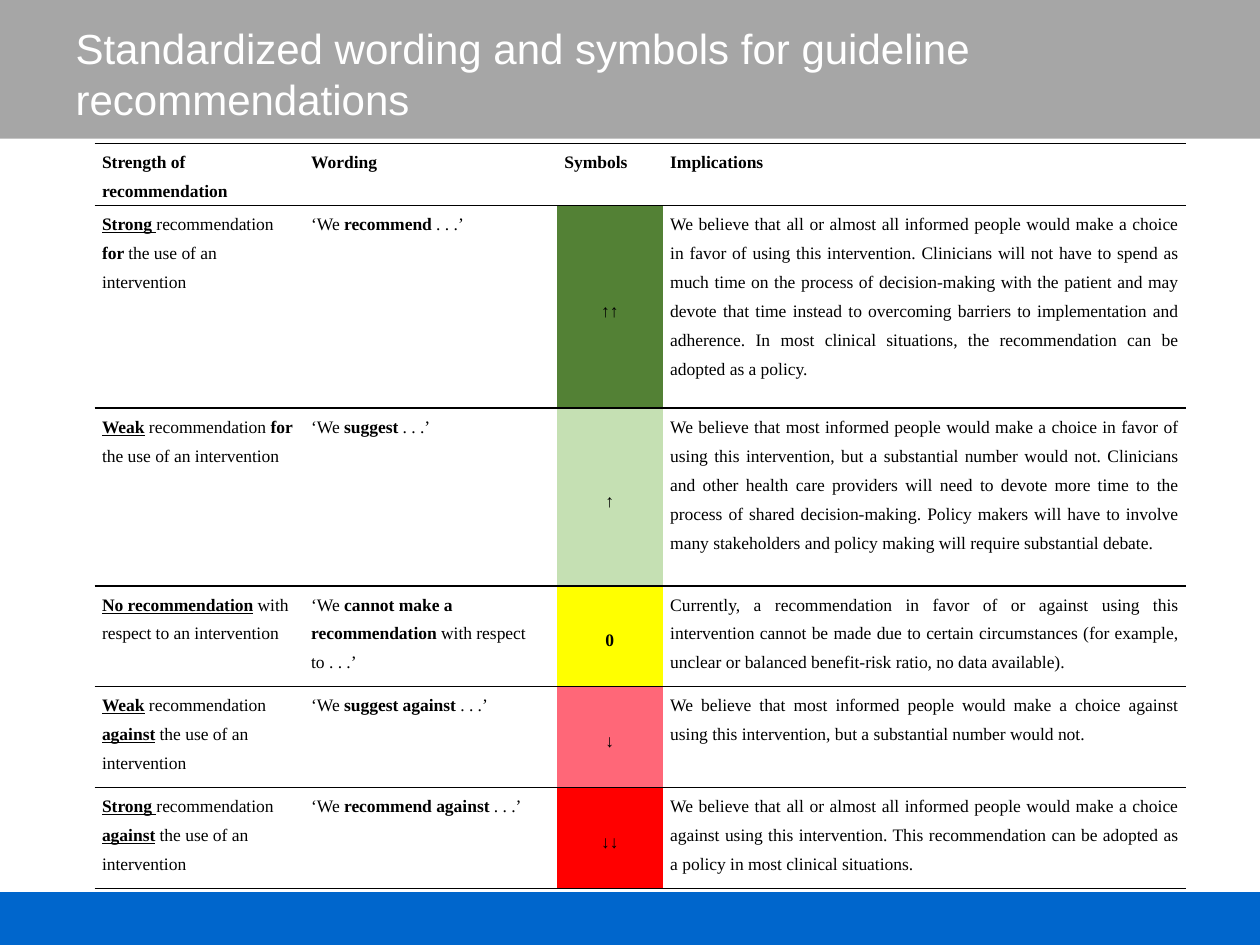
from lxml.etree import SubElement
from pptx import Presentation
from pptx.dml.color import RGBColor
from pptx.enum.shapes import MSO_SHAPE as Shape
from pptx.enum.text import MSO_ANCHOR as Anchor, MSO_AUTO_SIZE as AutoSize, PP_ALIGN as Align
from pptx.oxml.ns import qn
from pptx.util import Inches, Pt

WHITE = RGBColor(0xFF, 0xFF, 0xFF)
BLACK = RGBColor(0x00, 0x00, 0x00)
GRAY = RGBColor(0xA6, 0xA6, 0xA6)
BLUE = RGBColor(0x00, 0x66, 0xCC)
DARK_GREEN = RGBColor(0x53, 0x81, 0x35)
LIGHT_GREEN = RGBColor(0xC5, 0xE0, 0xB3)
YELLOW = RGBColor(0xFF, 0xFF, 0x00)
PINK = RGBColor(0xFF, 0x67, 0x78)
RED = RGBColor(0xFF, 0x00, 0x00)

TITLE = "Standardized wording and symbols for guideline recommendations"
COLUMN_WIDTHS = [1.66, 2.01, 0.84, 4.15]
ROW_HEIGHTS = [0.49, 1.61, 1.41, 0.8, 0.8, 0.8]
SYMBOL_COLUMN, IMPLICATIONS_COLUMN = 2, 3

# *text* is bold, _text_ is bold and underlined
HEADINGS = ["*Strength of recommendation*", "*Wording*", "*Symbols*", "*Implications*"]
RECOMMENDATIONS = [
    (DARK_GREEN, [
        "_Strong _recommendation *for *the use of an intervention",
        "‘We *recommend *. . .’",
        "*↑↑*",
        "We believe that all or almost all informed people would make a choice in favor of "
        "using this intervention. Clinicians will not have to spend as much time on the "
        "process of decision-making with the patient and may devote that time instead to "
        "overcoming barriers to implementation and adherence. In most clinical situations, "
        "the recommendation can be adopted as a policy."]),
    (LIGHT_GREEN, [
        "_Weak_ recommendation *for *the use of an intervention",
        "‘We *suggest* . . .’",
        "*↑*",
        "We believe that most informed people would make a choice in favor of using this "
        "intervention, but a substantial number would not. Clinicians and other health care "
        "providers will need to devote more time to the process of shared decision-making. "
        "Policy makers will have to involve many stakeholders and policy making will require "
        "substantial debate."]),
    (YELLOW, [
        "_No recommendation_ with respect to an intervention",
        "‘We *cannot make a recommendation* with respect to . . .’",
        "*0*",
        "Currently, a recommendation in favor of or against using this intervention cannot be "
        "made due to certain circumstances (for example, unclear or balanced benefit-risk "
        "ratio, no data available)."]),
    (PINK, [
        "_Weak_ recommendation _against_ the use of an intervention",
        "‘We *suggest against* . . .’",
        "*↓*",
        "We believe that most informed people would make a choice against using this "
        "intervention, but a substantial number would not."]),
    (RED, [
        "_Strong _recommendation _against_ the use of an intervention",
        "‘We *recommend against* . . .’",
        "*↓↓*",
        "We believe that all or almost all informed people would make a choice against using "
        "this intervention. This recommendation can be adopted as a policy in most clinical "
        "situations."]),
]


def add_band(slide, left, top, width, height, color):
    band = slide.shapes.add_shape(Shape.RECTANGLE, left, top, width, height)
    band.shadow.inherit = False
    band.fill.solid()
    band.fill.fore_color.rgb = color
    band.line.fill.background()


def place_title(slide, left, top, width, height):
    """Format the title placeholder and bring it in front of the bands."""
    title = slide.shapes.title
    title.left, title.top, title.width, title.height = left, top, width, height
    frame = title.text_frame
    frame.text = TITLE
    frame.word_wrap = True
    frame.auto_size = AutoSize.NONE
    frame.vertical_anchor = Anchor.TOP
    paragraph = frame.paragraphs[0]
    paragraph.alignment = Align.LEFT
    paragraph.font.name = "Arial"
    paragraph.font.size = Pt(24)
    paragraph.font.color.rgb = WHITE
    slide.shapes._spTree.append(title._element)


def add_marked_runs(paragraph, text):
    for i, chunk in enumerate(text.split("*")):
        for j, piece in enumerate(chunk.split("_")):
            if piece:
                run = paragraph.add_run()
                run.text = piece
                run.font.bold = bool(i % 2 or j % 2)
                run.font.underline = bool(j % 2)


def set_horizontal_rules(cell):
    """Draw the top and bottom borders only."""
    properties = cell._tc.get_or_add_tcPr()
    for side in ("lnL", "lnR", "lnT", "lnB"):
        line = SubElement(properties, qn(f"a:{side}"), w=str(Pt(1)))
        if side in ("lnT", "lnB"):
            fill = SubElement(line, qn("a:solidFill"))
            SubElement(fill, qn("a:srgbClr"), val=str(BLACK))
        else:
            SubElement(line, qn("a:noFill"))


def fill_cell(cell, text, alignment, space_after, color=None):
    cell.margin_left = cell.margin_right = Inches(0.06)
    cell.margin_top = cell.margin_bottom = 0
    set_horizontal_rules(cell)
    if color is None:
        cell.fill.background()
    else:
        cell.fill.solid()
        cell.fill.fore_color.rgb = color
        cell.vertical_anchor = Anchor.MIDDLE
    paragraph = cell.text_frame.paragraphs[0]
    paragraph.alignment = alignment
    paragraph.line_spacing = 1.5
    paragraph.space_after = Pt(space_after)
    paragraph.font.name = "Times New Roman"
    paragraph.font.size = Pt(10)
    paragraph.font.color.rgb = BLACK
    add_marked_runs(paragraph, text)


def add_recommendation_table(slide, left, top, width, height):
    table = slide.shapes.add_table(
        len(ROW_HEIGHTS), len(COLUMN_WIDTHS), left, top, width, height).table
    table.first_row = table.horz_banding = False
    for column, column_width in zip(table.columns, COLUMN_WIDTHS):
        column.width = Inches(column_width)
    for row, row_height in zip(table.rows, ROW_HEIGHTS):
        row.height = Inches(row_height)

    for index, heading in enumerate(HEADINGS):
        alignment = Align.JUSTIFY if index == SYMBOL_COLUMN else Align.LEFT
        fill_cell(table.cell(0, index), heading, alignment, 8 if index else 0)

    body_alignments = [Align.LEFT, Align.LEFT, Align.CENTER, Align.JUSTIFY]
    for row_index, (color, texts) in enumerate(RECOMMENDATIONS, start=1):
        for index, (text, alignment) in enumerate(zip(texts, body_alignments)):
            fill_cell(table.cell(row_index, index), text, alignment,
                      0 if index == IMPLICATIONS_COLUMN else 8,
                      color if index == SYMBOL_COLUMN else None)


def main():
    presentation = Presentation()
    presentation.slide_width = Inches(10)
    presentation.slide_height = Inches(7.5)
    slide = presentation.slides.add_slide(presentation.slide_layouts[5])
    add_band(slide, 0, Inches(7.08), Inches(10), Inches(0.42), BLUE)
    add_band(slide, 0, 0, Inches(10), Inches(1.1), GRAY)
    add_recommendation_table(slide, Inches(0.75), Inches(1.14),
                             Inches(sum(COLUMN_WIDTHS)), Inches(sum(ROW_HEIGHTS)))
    place_title(slide, Inches(0.5), Inches(0.13), Inches(9), Inches(0.61))
    presentation.save("out.pptx")


if __name__ == "__main__":
    main()
